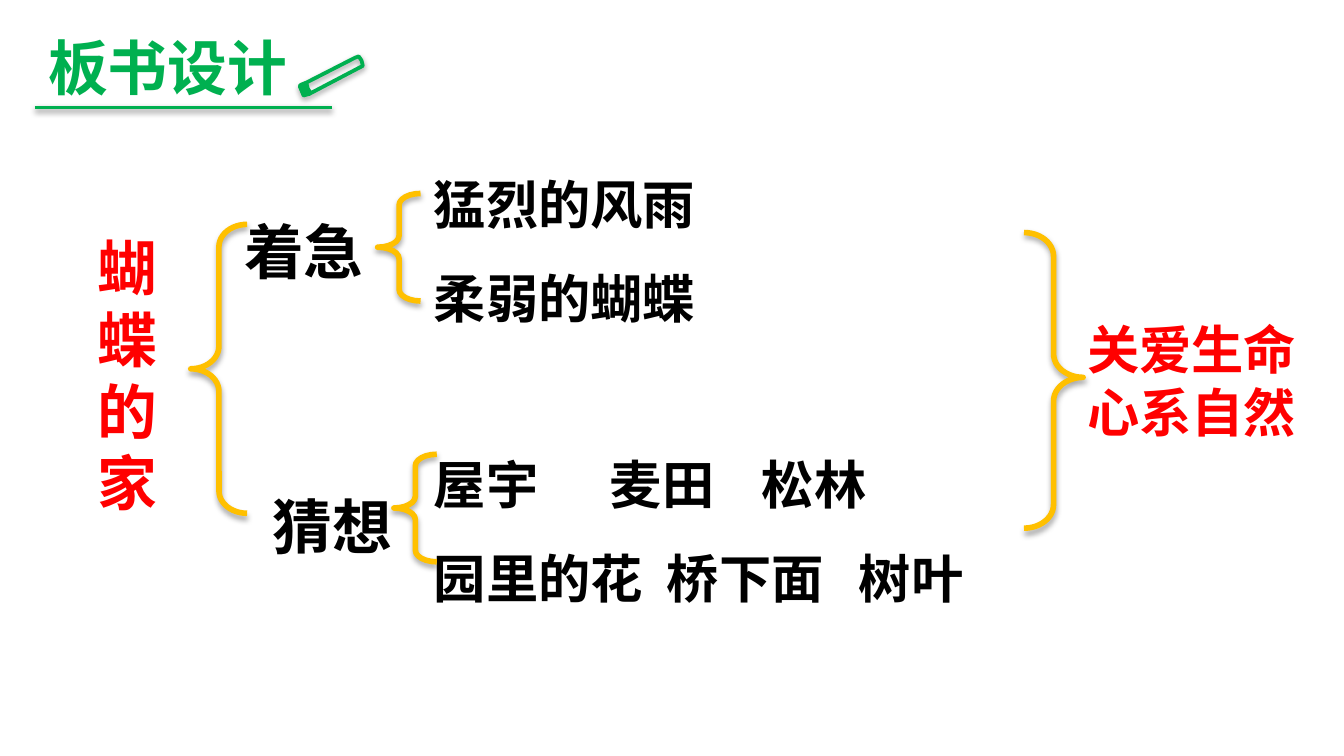
from dataclasses import dataclass

from lxml.etree import SubElement
from pptx import Presentation
from pptx.dml.color import RGBColor as RGB
from pptx.enum.shapes import MSO_CONNECTOR as LINE, MSO_SHAPE as SHAPE
from pptx.enum.text import MSO_AUTO_SIZE as AUTO
from pptx.oxml.ns import qn
from pptx.util import Pt


@dataclass(frozen=True)
class Theme:
    font: str = "Noto Sans CJK SC"
    black: RGB = RGB(0, 0, 0)
    red: RGB = RGB(0xFF, 0, 0)
    green: RGB = RGB(0, 0xB0, 0x50)
    gold: RGB = RGB(0xFF, 0xC0, 0)
    large: int = 32
    medium: int = 28
    brace_line: int = 3
    title_line: int = 2


T = Theme()

TEXTS = [
    (["猛烈的风雨", "柔弱的蝴蝶"], (225.4, 72, 251.3, 108.7), T.medium, T.black, 1.5, True),
    (["着急"], (123.8, 92.2, 79.2, 56.2), T.large, T.black, 1.5, False),
    (["屋宇\t麦田\t松林", "园里的花\t桥下面\t树叶"],
     (225.4, 221.8, 355, 100.8), T.medium, T.black, 1.5, True),
    (["关爱生命", "心系自然"], (575.3, 166.3, 137.5, 74.9), T.medium, T.red, 1, True),
    (["猜想"], (139, 239.8, 79.2, 56.2), T.large, T.black, 1.5, False),
    (["蝴蝶的家"], (45.4, 120.2, 53.3, 162.7), T.large, T.red, 1, True),
    (["板书设计"], (18.7, 13, 153.4, 46.1), T.large, T.green, 1, True),
]
TAB_STOPS = {"屋宇\t麦田\t松林": (94.3, 175.7), "园里的花\t桥下面\t树叶": (124.8, 227.7)}

BRACES = [
    (SHAPE.LEFT_BRACE, (102.2, 120.2, 30.2, 154.8), (0.4, 0.5)),
    (SHAPE.LEFT_BRACE, (202.3, 103.7, 23, 57.6), (0.27, 0.5)),
    (SHAPE.LEFT_BRACE, (211, 243.4, 23, 57.6), (0.27, 0.5)),
    (SHAPE.RIGHT_BRACE, (548.6, 124.6, 31.7, 158.4), (0.4, 0.49)),
]

UNDERLINE = (18.7, 57.6, 177.8, 57.6)
PENCIL_BODY = [(160.6, 46.1), (162.7, 51.1), (165.6, 50.4), (194.4, 35.3),
               (193.7, 32.4), (192.2, 30.2), (190.1, 31)]
PENCIL_TIP = [(166.3, 49.7), (164.9, 47.5), (164.2, 44.6), (163.4, 44.6),
              (161.3, 45.4), (160.6, 46.1), (162.7, 51.1), (164.2, 50.4)]


def points(values):
    return [Pt(v) for v in values]


def set_line(s, color, width, opacity=0, distance=0):
    """Style the outline and set the shadow, which is absent at zero opacity."""
    s.line.color.rgb = color
    s.line.width = Pt(width)
    effects = SubElement(s._element.spPr, qn("a:effectLst"))
    if opacity:
        shadow = SubElement(effects, qn("a:outerShdw"), blurRad=str(Pt(3.1)),
                            dist=str(Pt(distance)), dir="5400000", rotWithShape="0")
        black = SubElement(shadow, qn("a:srgbClr"), val="000000")
        SubElement(black, qn("a:alpha"), val=str(opacity * 1000))


def add_text(shapes, lines, box, size, color, spacing, wrap):
    tf = shapes.add_textbox(*points(box)).text_frame
    tf.text = "\n".join(lines)
    tf.word_wrap = wrap
    tf.auto_size = AUTO.SHAPE_TO_FIT_TEXT
    for p, line in zip(tf.paragraphs, lines):
        p.line_spacing = spacing
        if line in TAB_STOPS:
            tabs = SubElement(p._p.get_or_add_pPr(), qn("a:tabLst"))
            for stop in TAB_STOPS[line]:
                SubElement(tabs, qn("a:tab"), pos=str(Pt(stop)), algn="l")
        for r in p.runs:
            r.font.name = T.font
            r.font.size = Pt(size)
            r.font.bold = True
            r.font.color.rgb = color
            SubElement(r._r.get_or_add_rPr(), qn("a:ea"), typeface=T.font)


def add_brace(shapes, kind, box, adjustments):
    s = shapes.add_shape(kind, *points(box))
    for i, value in enumerate(adjustments):
        s.adjustments[i] = value
    s.fill.background()
    set_line(s, T.gold, T.brace_line, 35, 1.8)


def add_outline(shapes, outline):
    start, *rest = [points(xy) for xy in outline]
    builder = shapes.build_freeform(*start)
    builder.add_line_segments(rest, close=True)
    return builder.convert_to_shape()


def add_title_mark(shapes):
    rule = shapes.add_connector(LINE.STRAIGHT, *points(UNDERLINE))
    set_line(rule, T.green, T.title_line, 38, 1.6)
    body = add_outline(shapes, PENCIL_BODY)
    body.fill.background()
    set_line(body, T.green, T.title_line, 38, 1.6)
    tip = add_outline(shapes, PENCIL_TIP)
    tip.fill.solid()
    tip.fill.fore_color.rgb = T.green
    set_line(tip, T.green, T.title_line)


def main():
    prs = Presentation()
    prs.slide_width, prs.slide_height = Pt(720), Pt(405)
    shapes = prs.slides.add_slide(prs.slide_layouts[6]).shapes
    for text in TEXTS:
        add_text(shapes, *text)
    for brace in BRACES:
        add_brace(shapes, *brace)
    add_title_mark(shapes)
    prs.save("out.pptx")


if __name__ == "__main__":
    main()
